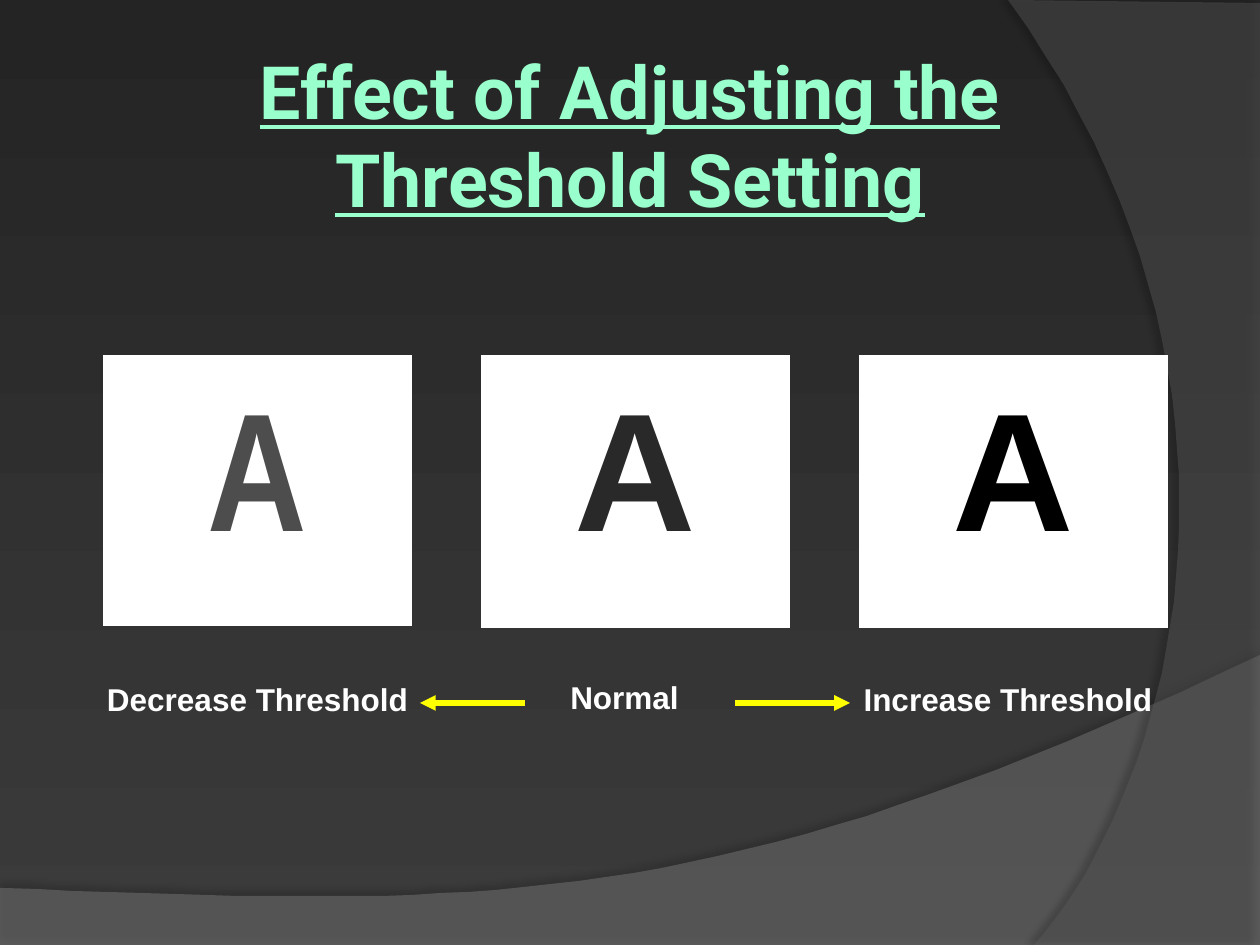
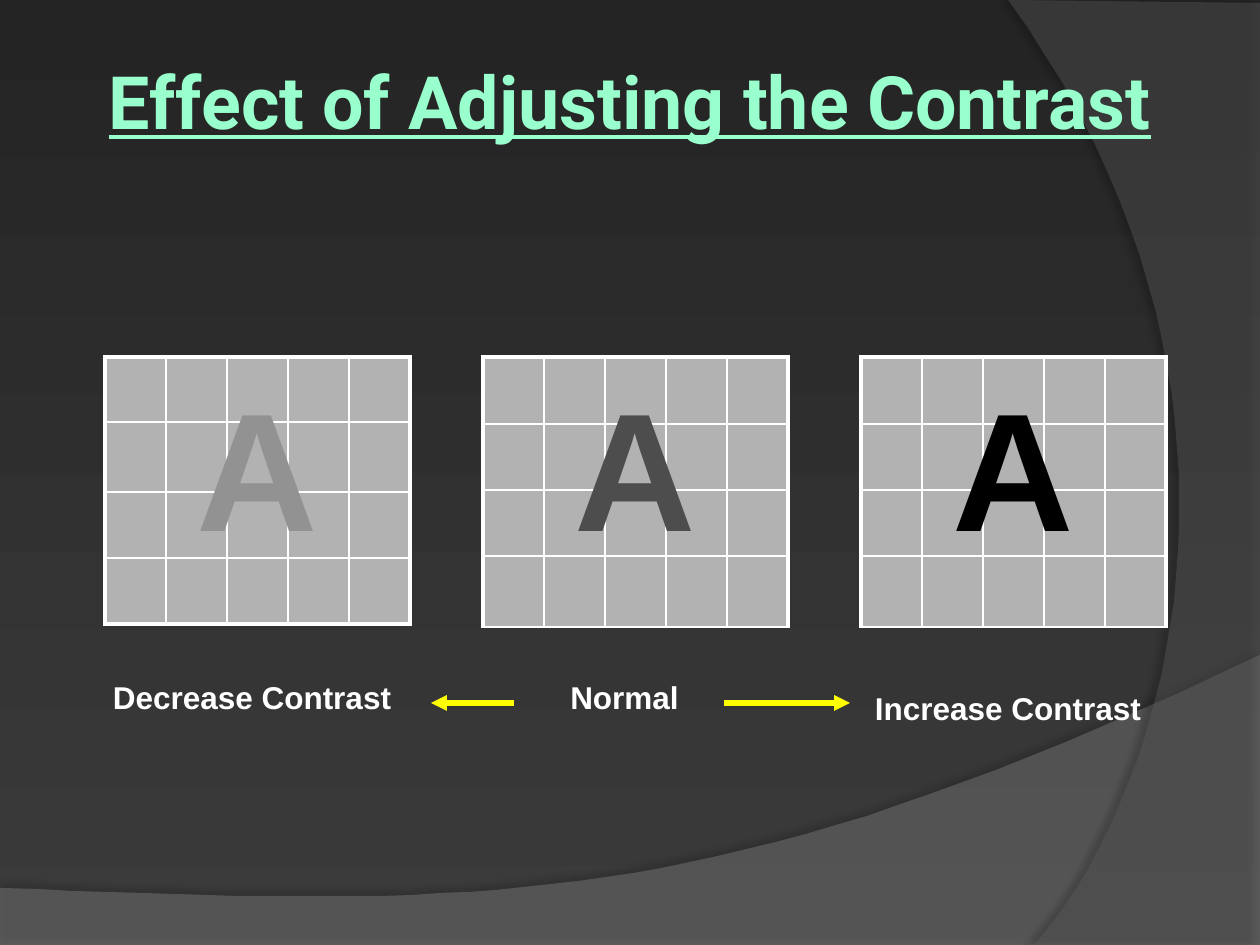
from lxml.etree import SubElement
from pptx import Presentation
from pptx.dml.color import RGBColor
from pptx.enum.shapes import MSO_CONNECTOR
from pptx.enum.text import MSO_ANCHOR as Anchor, MSO_AUTO_SIZE as AutoSize, PP_ALIGN as Align
from pptx.oxml import parse_xml
from pptx.oxml.ns import nsdecls, qn
from pptx.util import Pt

SCALE = 914400 / 126  # EMU in one px
WIDTH, HEIGHT = 1260, 945
COLORS = {
    "top": "242424", "bottom": "3B3B3B", "wave": "7F7F7F", "arc": "5E5E5E",
    "title": "99FFCC", "white": "FFFFFF", "black": "000000", "arrow": "FFFF00",
    "paper": "B2B2B2", "faint": "929292", "gray": "4D4D4D", "dark": "292929",
}
THIN, THICK = 1, 2.25
PANEL_LEFT, PANEL_TOP, PANEL_STEP = 105, 357, 378
PANEL_WIDTH, PANEL_HEIGHT, COLUMN_WIDTH = 305, 273, 61
FIRST_ROWS, OTHER_ROWS = (65, 70, 66, 66), (67, 66, 66, 71)
ARROW_Y = 703


def emu(*lengths):
    return [round(length * SCALE) for length in lengths]


def rgb(name):
    return RGBColor.from_string(COLORS[name])


def line_xml(tag, color, width):
    return parse_xml(
        f'<a:{tag} {nsdecls("a")} w="{Pt(width)}"><a:solidFill>'
        f'<a:srgbClr val="{COLORS[color]}"/></a:solidFill></a:{tag}>')


def curve(start, control_1, control_2, end, steps=40):
    """Points along a cubic curve, without its start."""
    points = []
    for step in range(1, steps + 1):
        t = step / steps
        weights = ((1 - t) ** 3, 3 * t * (1 - t) ** 2, 3 * t * t * (1 - t), t ** 3)
        corners = (start, control_1, control_2, end)
        points.append(tuple(sum(weight * corner[axis] for weight, corner in zip(weights, corners))
                            for axis in (0, 1)))
    return points


def write(shape, text, size=18, font="Arial", color="white", underline=None, outline=None):
    paragraph = shape.text_frame.paragraphs[0]
    paragraph.text = text.replace("\n", "\v")
    paragraph.alignment = Align.CENTER
    for run in paragraph.runs:
        run.font.size, run.font.name = Pt(size), font
        run.font.bold, run.font.underline = True, underline
        run.font.color.rgb = rgb(color)
    if outline:
        for properties in shape.element.iter(qn("a:rPr")):
            properties.insert(0, line_xml("ln", outline, 0.75))


class Deck:
    def __init__(self):
        self.presentation = Presentation()
        self.presentation.slide_width, self.presentation.slide_height = emu(WIDTH, HEIGHT)
        self.master = self.presentation.slide_master
        self.slide = None
        fill = self.master.background.fill
        fill.gradient()
        fill.gradient_angle = 270
        for stop, color in zip(fill.gradient_stops, ("top", "bottom")):
            stop.color.rgb = rgb(color)

    def add_slide(self, title, top, height):
        self.slide = self.presentation.slides.add_slide(self.presentation.slide_layouts[5])
        shape = self.slide.shapes.title
        shape.left, shape.top, shape.width, shape.height = emu(63, top, 1134, height)
        frame = shape.text_frame
        frame.auto_size, frame.vertical_anchor = AutoSize.NONE, Anchor.MIDDLE
        frame.margin_left, frame.margin_top, frame.margin_right, frame.margin_bottom = emu(6, 6, 6, 6)
        write(shape, title, size=42, font="Roboto", color="title", underline=True)

    def band(self, points, color, alpha, shadow_alpha, distance, direction, order):
        """Draw a translucent band and move it to the master."""
        builder = self.slide.shapes.build_freeform(*points[0], scale=SCALE)
        builder.add_line_segments(points[1:], close=True)
        shape = builder.convert_to_shape()
        shape.fill.solid()
        shape.fill.fore_color.rgb = rgb(color)
        shape.line.fill.background()
        shape.shadow.inherit = False
        properties = shape.element.spPr
        fill_color = properties.find(qn("a:solidFill"))[0]
        SubElement(fill_color, qn("a:alpha"), val=str(alpha * 1000))
        properties.find(qn("a:effectLst")).append(parse_xml(
            f'<a:outerShdw {nsdecls("a")} blurRad="{Pt(4)}" dist="{Pt(distance)}" '
            f'dir="{direction * 60000}" algn="ctr" rotWithShape="0"><a:srgbClr val="{COLORS["black"]}">'
            f'<a:alpha val="{shadow_alpha * 1000}"/></a:srgbClr></a:outerShdw>'))
        self.master.element.cSld.spTree.insert(2 + order, shape.element)

    def grid(self, left, rows, fill, heavy_bottom):
        shape = self.slide.shapes.add_table(
            len(rows), 5, *emu(left, PANEL_TOP, PANEL_WIDTH, sum(rows)))
        table = shape.table
        table.first_row = table.horz_banding = False
        for column in table.columns:
            column.width = emu(COLUMN_WIDTH)[0]
        for row, height in zip(table.rows, rows):
            row.height = emu(height)[0]
        for cell in table.iter_cells():
            cell.fill.solid()
            cell.fill.fore_color.rgb = rgb(fill)
        # Thick outside, thin inside
        for index, properties in enumerate(shape.element.iter(qn("a:tcPr"))):
            row, column = divmod(index, 5)
            edges = (("lnL", column == 0), ("lnR", column == 4), ("lnT", row == 0),
                     ("lnB", heavy_bottom and row == len(rows) - 1))
            for order, (tag, thick) in enumerate(edges):
                properties.insert(order, line_xml(tag, "white", THICK if thick else THIN))

    def text(self, text, left, top, width, height, wrap=True, **style):
        shape = self.slide.shapes.add_textbox(*emu(left, top, width, height))
        shape.text_frame.word_wrap = wrap
        shape.text_frame.auto_size = AutoSize.SHAPE_TO_FIT_TEXT if wrap else AutoSize.NONE
        write(shape, text, **style)

    def arrow(self, start, end):
        connector = self.slide.shapes.add_connector(
            MSO_CONNECTOR.STRAIGHT, *emu(start, ARROW_Y, end, ARROW_Y))
        connector.line.color.rgb = rgb("arrow")
        connector.line.width = Pt(3)
        properties = connector.element.spPr
        SubElement(properties.find(qn("a:ln")), qn("a:tailEnd"), type="triangle")
        SubElement(properties, qn("a:effectLst"))

    def comparison(self, fill, letters, labels, arrows):
        for index, (color, outline, font) in enumerate(letters):
            left = PANEL_LEFT + index * PANEL_STEP
            self.grid(left, OTHER_ROWS if index else FIRST_ROWS, fill, heavy_bottom=index == 0)
            self.text("A", left, PANEL_TOP, PANEL_WIDTH, PANEL_HEIGHT, wrap=False,
                      size=96, font=font, color=color, outline=outline)
        for label, left, top, width in labels:
            self.text(label, left, top, width, 50)
        for start, end in arrows:
            self.arrow(start, end)


def main():
    deck = Deck()

    # Threshold slide
    deck.add_slide("Effect of Adjusting the\nThreshold Setting", 48, 173)
    deck.comparison(
        "white",
        letters=[("gray", "black", "Arial Narrow"), ("dark", "black", "Arial"),
                 ("black", "black", "Arial")],
        labels=[("Decrease Threshold", 84, 674, 347), ("Normal", 451, 672, 347),
                ("Increase Threshold", 840, 674, 336)],
        arrows=[(525, 420), (735, 850)])

    # Bands shared by all slides
    wave = [(0, 888), (0, 946), (WIDTH, 946), (WIDTH, 655)]
    wave += curve(wave[-1], (704, 919), (493, 906), wave[0])
    deck.band(wave, "wave", 45, 35, 3.5, 270, order=0)
    arc = [(WIDTH, 3), (WIDTH, HEIGHT), (1034, HEIGHT)]
    arc += curve(arc[-1], (1178, 780), (1283, 378), (1008, 0))
    deck.band(arc, "arc", 40, 45, 4, 180, order=1)

    # Contrast slide
    deck.add_slide("Effect of Adjusting the Contrast", 53, 95)
    deck.comparison(
        "paper",
        letters=[("faint", "faint", "Arial"), ("gray", "paper", "Arial"),
                 ("black", "black", "Arial")],
        labels=[("Decrease Contrast", 84, 672, 336), ("Normal", 451, 672, 347),
                ("Increase Contrast", 840, 683, 336)],
        arrows=[(514, 431), (724, 850)])

    deck.presentation.save("out.pptx")


if __name__ == "__main__":
    main()
